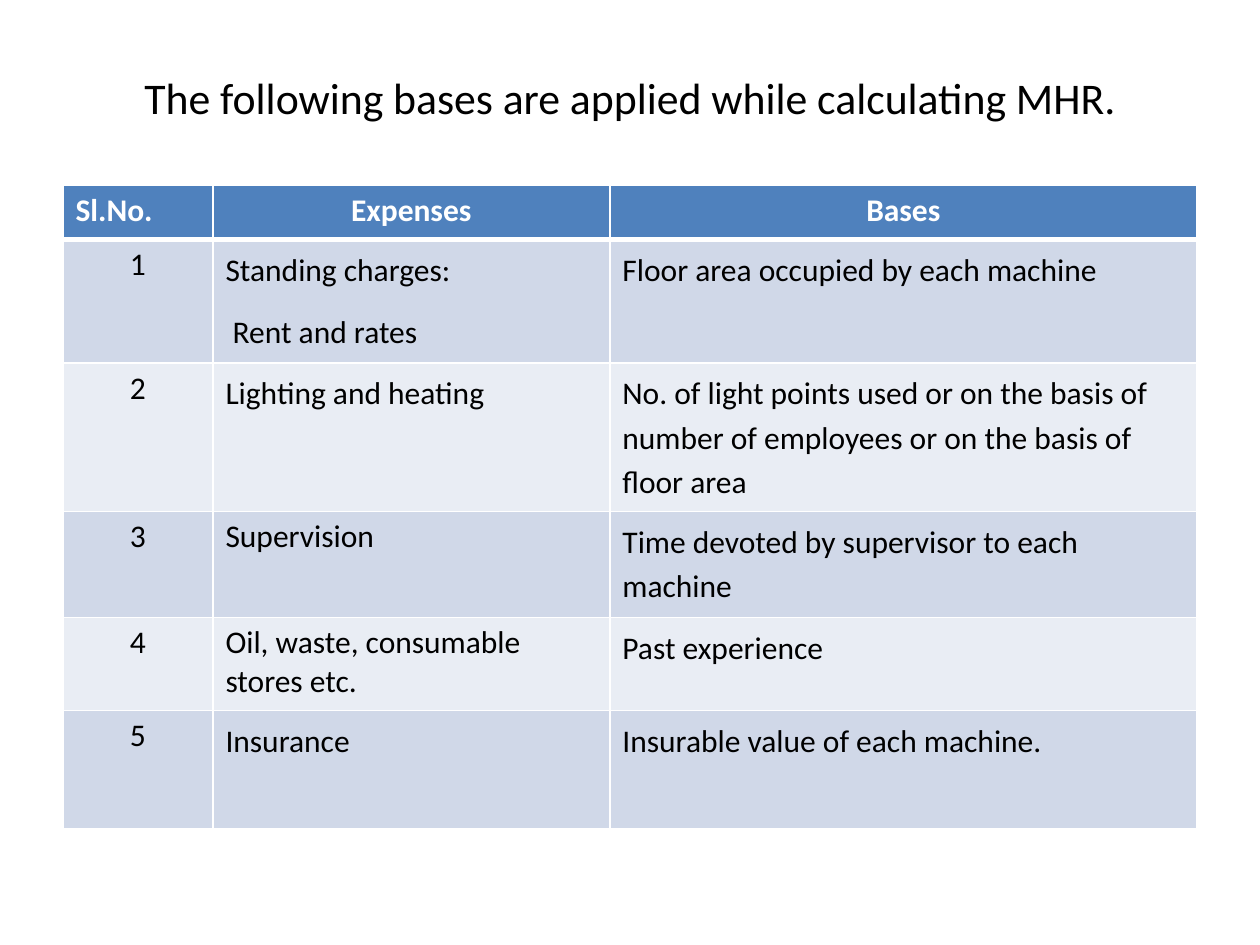
"""Build a slide with a table of the bases applied when calculating MHR."""
from lxml import etree
from pptx import Presentation
from pptx import util as u
from pptx.dml.color import RGBColor
from pptx.enum import text
from pptx.oxml import ns

COLORS = {"ink": "000000", "paper": "FFFFFF", "header": "4F81BD",
          "odd": "D0D8E8", "even": "E9EDF4"}
HEADINGS = ["Sl.No.", "Expenses", "Bases"]
EXPENSES = [
    ("Standing charges:\n Rent and rates", "Floor area occupied by each machine"),
    ("Lighting and heating",
     "No. of light points used or on the basis of number of employees "
     "or on the basis of floor area"),
    ("Supervision", "Time devoted by supervisor to each machine"),
    ("Oil, waste, consumable stores etc.", "Past experience"),
    ("Insurance", "Insurable value of each machine."),
]
SINGLE_SPACED = {"Supervision", "Oil, waste, consumable stores etc."}
COLUMN_WIDTHS = [1.19, 3.15, 4.66]
ROW_HEIGHTS = [0.43, 0.98, 1.18, 0.84, 0.74, 0.94]


class BasesSlide:
    """Holds the style and the current slide."""

    font = "Calibri"

    def __init__(self, deck):
        """Add a title-only slide to the deck."""
        self.slide = deck.slides.add_slide(deck.slide_layouts[5])

    def style(self, frame, size, color, align, bold=False, spaced=False):
        """Format every paragraph and run of a text frame."""
        for paragraph in frame.paragraphs:
            paragraph.alignment = align
            if spaced:
                paragraph.line_spacing = 1.15
                paragraph.space_after = u.Pt(10)
            for run in paragraph.runs:
                run.font.name = self.font
                run.font.size = u.Pt(size)
                run.font.bold = bold
                run.font.color.rgb = RGBColor.from_string(COLORS[color])

    def title(self, wording):
        """Place and format the title."""
        heading = self.slide.shapes.title
        heading.left, heading.top = u.Inches(0.5), u.Inches(0.3)
        heading.width, heading.height = u.Inches(9), u.Inches(1.25)
        frame = heading.text_frame
        frame.text = wording
        frame.vertical_anchor = text.MSO_ANCHOR.MIDDLE
        frame.margin_bottom = u.Inches(0.42)
        self.style(frame, 25, "ink", text.PP_ALIGN.CENTER, spaced=True)

    def borders(self, cell, **points):
        """Draw the four cell edges with the given widths."""
        properties = cell._tc.get_or_add_tcPr()
        for edge in "LRTB":
            line = etree.SubElement(properties, ns.qn(f"a:ln{edge}"),
                                    w=str(u.Pt(points.get(edge, 1))))
            fill = etree.SubElement(line, ns.qn("a:solidFill"))
            etree.SubElement(fill, ns.qn("a:srgbClr"), val=COLORS["paper"])

    def cell(self, cell, wording, row, column):
        """Fill one cell according to its row and column."""
        header = row == 0
        self.borders(cell, T=3 if row == 1 else 1, B=3 if header else 1)
        shade = "header" if header else "odd" if row % 2 else "even"
        cell.fill.solid()
        cell.fill.fore_color.rgb = RGBColor.from_string(COLORS[shade])
        cell.text_frame.text = wording
        centred = (column > 0) == header
        self.style(cell.text_frame, 18, "paper" if header else "ink",
                   text.PP_ALIGN.CENTER if centred else text.PP_ALIGN.LEFT,
                   bold=header,
                   spaced=not header and column > 0 and wording not in SINGLE_SPACED)

    def table(self, rows):
        """Add the table of expenses and bases."""
        bases = self.slide.shapes.add_table(
            len(rows), len(COLUMN_WIDTHS), u.Inches(0.5), u.Inches(1.47),
            u.Inches(sum(COLUMN_WIDTHS)), u.Inches(sum(ROW_HEIGHTS))).table
        for column, width in zip(bases.columns, COLUMN_WIDTHS):
            column.width = u.Inches(width)
        for row, height in zip(bases.rows, ROW_HEIGHTS):
            row.height = u.Inches(height)
        for r, wordings in enumerate(rows):
            for c, wording in enumerate(wordings):
                self.cell(bases.cell(r, c), wording, r, c)


def main():
    """Build and save the deck."""
    deck = Presentation()
    deck.slide_width, deck.slide_height = u.Inches(10), u.Inches(7.5)
    page = BasesSlide(deck)
    page.title("The following bases are applied while calculating MHR.")
    numbered = [(str(n), *entry) for n, entry in enumerate(EXPENSES, 1)]
    page.table([HEADINGS, *numbered])
    deck.save("out.pptx")


if __name__ == "__main__":
    main()
